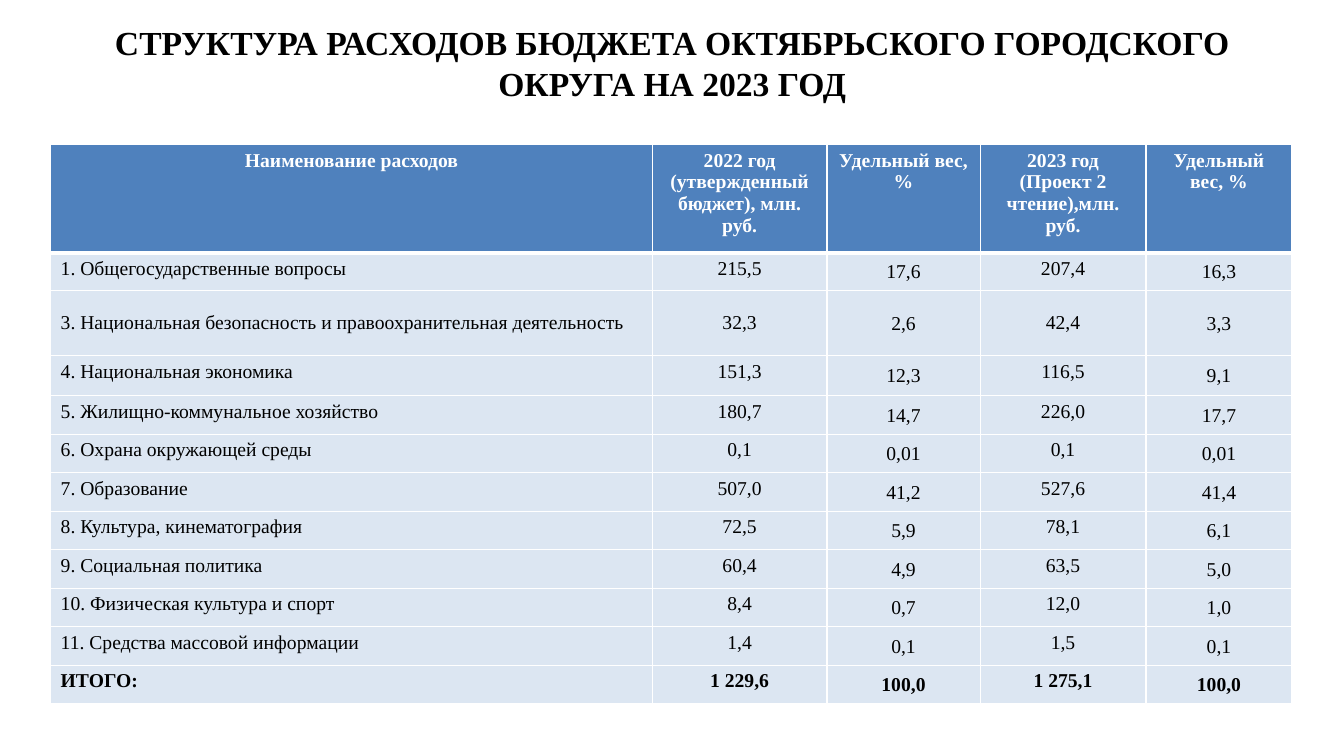
from typing import NamedTuple

from lxml import etree
from pptx import Presentation
from pptx import util as u
from pptx.dml import color
from pptx.enum import text
from pptx.oxml import ns

FONT = "Times New Roman"
WHITE, BLACK, BLUE, PALE = "FFFFFF", "000000", "4F81BD", "DCE6F2"
WIDTHS = (15.16, 4.4, 3.86, 4.18, 3.68)
HEAD = (
    "Наименование расходов",
    "2022 год (утвержденный бюджет), млн. руб.",
    "Удельный вес,%",
    "2023 год (Проект 2 чтение),млн. руб.",
    "Удельный вес, %",
)


class Item(NamedTuple):
    cells: tuple[str, ...]
    height: float = 0.97
    middle: bool = False
    bold: bool = False
    head: bool = False


ITEMS = (
    Item(HEAD, height=2.73, bold=True, head=True),
    Item(("1. Общегосударственные вопросы", "215,5", "17,6", "207,4", "16,3"), height=0.94),
    Item(("3. Национальная безопасность и правоохранительная деятельность",
          "32,3", "2,6", "42,4", "3,3"), height=1.65, middle=True),
    Item(("4. Национальная экономика", "151,3", "12,3", "116,5", "9,1"), height=1.01),
    Item(("5. Жилищно-коммунальное хозяйство", "180,7", "14,7", "226,0", "17,7")),
    Item(("6. Охрана окружающей среды", "0,1", "0,01", "0,1", "0,01")),
    Item(("7. Образование", "507,0", "41,2", "527,6", "41,4")),
    Item(("8. Культура, кинематография", "72,5", "5,9", "78,1", "6,1")),
    Item(("9. Социальная политика", "60,4", "4,9", "63,5", "5,0")),
    Item(("10. Физическая культура и спорт", "8,4", "0,7", "12,0", "1,0")),
    Item(("11. Средства массовой информации", "1,4", "0,1", "1,5", "0,1")),
    Item(("ИТОГО:", "1 229,6", "100,0", "1 275,1", "100,0"), bold=True),
)


def paint(target, shade: str) -> None:
    target.rgb = color.RGBColor.from_string(shade)


def style(frame, size: float, shade: str, bold: bool, center: bool) -> None:
    for para in frame.paragraphs:
        para.alignment = text.PP_ALIGN.CENTER if center else text.PP_ALIGN.LEFT
        for run in para.runs:
            run.font.name = FONT
            run.font.size = u.Pt(size)
            run.font.bold = bold
            paint(run.font.color, shade)


def edge(cell, side: str, width: float) -> None:
    props = cell._tc.get_or_add_tcPr()
    line = etree.SubElement(props, ns.qn(f"a:ln{side}"), w=str(u.Pt(width)))
    fill = etree.SubElement(line, ns.qn("a:solidFill"))
    etree.SubElement(fill, ns.qn("a:srgbClr"), val=WHITE)


def fill_cell(cell, item: Item, row: int, col: int) -> None:
    share = col in (2, 4) and not item.head
    cell.text_frame.text = item.cells[col]
    style(cell.text_frame, 14, WHITE if item.head else BLACK, item.bold, item.head or col > 0)
    cell.vertical_anchor = text.MSO_ANCHOR.MIDDLE if share or item.middle else text.MSO_ANCHOR.TOP
    cell.margin_left = cell.margin_right = u.Cm(0.03 if share else 0.25)
    cell.margin_top = u.Cm(0.03 if share else 0.13)
    cell.margin_bottom = u.Cm(0 if share else 0.13)
    for side in "LRTB":
        thick = (row, side) in ((0, "B"), (1, "T"))
        edge(cell, side, 3 if thick else 1)
    cell.fill.solid()
    paint(cell.fill.fore_color, BLUE if item.head else PALE)


def add_title(slide) -> None:
    title = slide.shapes.title
    title.left, title.top = u.Cm(1.7), u.Cm(0.36)
    title.width, title.height = u.Cm(30.48), u.Cm(2.44)
    frame = title.text_frame
    frame.text = "СТРУКТУРА РАСХОДОВ БЮДЖЕТА ОКТЯБРЬСКОГО ГОРОДСКОГО ОКРУГА НА 2023 ГОД"
    frame.auto_size = text.MSO_AUTO_SIZE.NONE
    frame.vertical_anchor = text.MSO_ANCHOR.MIDDLE
    style(frame, 24, BLACK, True, True)


def add_budget(slide) -> None:
    high = sum(item.height for item in ITEMS)
    table = slide.shapes.add_table(
        len(ITEMS), len(WIDTHS), u.Cm(1.28), u.Cm(3.64), u.Cm(sum(WIDTHS)), u.Cm(high)
    ).table
    table.horz_banding = False
    for col, width in enumerate(WIDTHS):
        table.columns[col].width = u.Cm(width)
    for row, item in enumerate(ITEMS):
        table.rows[row].height = u.Cm(item.height)
        for col in range(len(WIDTHS)):
            fill_cell(table.cell(row, col), item, row, col)


def main() -> None:
    deck = Presentation()
    deck.slide_width, deck.slide_height = u.Cm(33.87), u.Cm(19.05)
    slide = deck.slides.add_slide(deck.slide_layouts[5])
    add_title(slide)
    add_budget(slide)
    deck.save("out.pptx")


if __name__ == "__main__":
    main()
